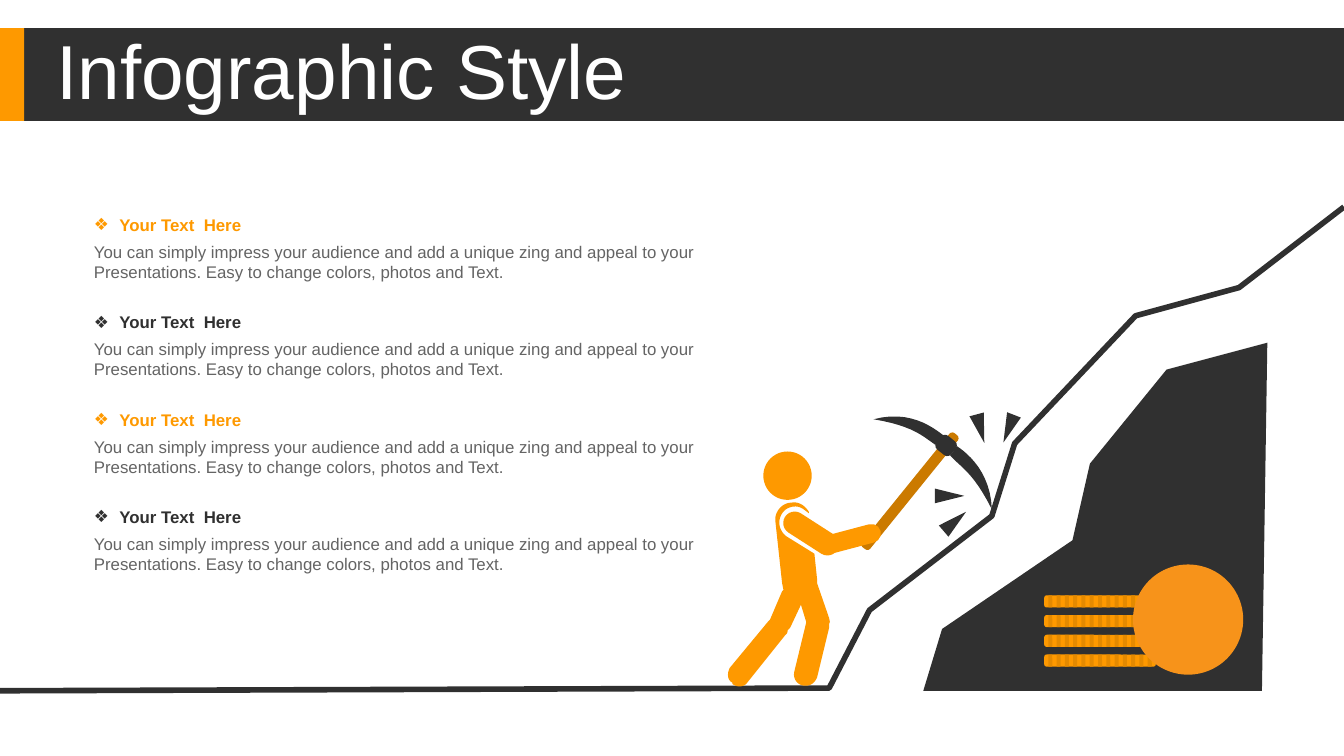
from dataclasses import dataclass

from lxml.etree import SubElement
from pptx import Presentation
from pptx.dml.color import RGBColor
from pptx.enum.shapes import MSO_SHAPE
from pptx.enum.text import MSO_ANCHOR, MSO_AUTO_SIZE, PP_ALIGN
from pptx.oxml.ns import qn
from pptx.util import Inches, Pt

COLORS = {
    "dark": "303030",
    "orange": "FE9900",
    "shade": "E58A00",
    "wood": "CB7A00",
    "coin": "F7931A",
    "gray": "646464",
    "white": "FFFFFF",
}
HEAD = "Your Text  Here"
BODY = ("You can simply impress your audience and add a unique zing and appeal "
        "to your Presentations. Easy to change colors, photos and Text.")


@dataclass
class Part:
    kind: MSO_SHAPE
    left: float
    top: float
    width: float
    height: float
    color: str
    turn: float = 0
    round: float | None = None


@dataclass
class Path:
    start: tuple
    steps: list
    color: str


RECT, PILL = MSO_SHAPE.RECTANGLE, MSO_SHAPE.ROUNDED_RECTANGLE
OVAL, WEDGE = MSO_SHAPE.OVAL, MSO_SHAPE.ISOSCELES_TRIANGLE

BARS = [Part(RECT, 0, 0.21, 10, 0.69, "dark"), Part(RECT, 0, 0.21, 0.18, 0.69, "orange")]
RIDGE = Path((0, 5.14), [(6.17, 5.12), (6.47, 4.54), (7.38, 3.84), (7.55, 3.3),
                         (8.45, 2.35), (9.22, 2.14), (10, 1.54)], "dark")
ROCK = Path((9.43, 2.55), [(8.68, 2.75), (8.11, 3.45), (7.98, 4.02), (7.01, 4.68),
                           (6.87, 5.14), (9.39, 5.14)], "dark")
PICK = [
    Part(PILL, 6.73, 3.11, 0.08, 1.09, "wood", 39, 0.34),
    Part(PILL, 6.97, 3.25, 0.14, 0.13, "dark", 39, 0.28),
]
BLADES = [
    Path((7.12, 3.32), [(7.21, 3.38, 7.37, 3.52, 7.38, 3.79),
                        (7.24, 3.51, 7.14, 3.47, 7.07, 3.39)], "dark"),
    Path((7.02, 3.24), [(6.93, 3.17, 6.76, 3.05, 6.5, 3.12),
                        (6.8, 3.17, 6.87, 3.25, 6.96, 3.31)], "dark"),
]
TORSO = Path((5.89, 3.74), [
    (5.94, 3.73, 5.99, 3.76, 6.02, 3.81), (6.02, 3.82), (5.98, 3.79),
    (5.93, 3.75, 5.85, 3.77, 5.82, 3.82), (5.78, 3.88, 5.8, 3.95, 5.85, 3.99),
    (6.06, 4.12), (6.08, 4.31), (6.08, 4.34), (6.17, 4.6),
    (6.17, 4.61, 6.18, 4.63, 6.17, 4.64), (6.17, 4.67), (6.08, 5.04),
    (6.06, 5.09, 6.02, 5.11, 5.97, 5.1), (5.93, 5.09, 5.9, 5.05, 5.91, 5),
    (6, 4.63), (5.96, 4.5), (5.88, 4.67), (5.86, 4.69), (5.86, 4.7),
    (5.86, 4.71, 5.85, 4.72, 5.84, 4.73), (5.56, 5.08),
    (5.54, 5.11, 5.49, 5.12, 5.45, 5.09), (5.45, 5.08),
    (5.41, 5.06, 5.41, 5.01, 5.43, 4.97), (5.72, 4.62), (5.73, 4.61),
    (5.82, 4.4), (5.83, 4.39), (5.82, 4.34), (5.77, 3.88),
    (5.76, 3.81, 5.82, 3.74, 5.89, 3.74),
], "orange")
LIMBS = [
    Part(OVAL, 5.68, 3.36, 0.36, 0.36, "orange"),
    Part(PILL, 5.95, 3.74, 0.17, 0.46, "orange", 302.7, 0.5),
    Part(PILL, 6.26, 3.78, 0.14, 0.46, "orange", 255.1, 0.5),
]
SPARKS = [Part(WEDGE, left, top, 0.11, 0.22, "dark", turn) for left, top, turn in
          [(7.05, 3.77, 49.3), (7.01, 3.58, 90), (7.24, 3.08, 165), (7.45, 3.08, 201.1)]]


def tint(name: str) -> RGBColor:
    return RGBColor.from_string(COLORS[name])


def draw_part(slide, part: Part) -> None:
    shape = slide.shapes.add_shape(part.kind, Inches(part.left), Inches(part.top),
                                   Inches(part.width), Inches(part.height))
    shape.shadow.inherit = False
    shape.fill.solid()
    shape.fill.fore_color.rgb = tint(part.color)
    shape.line.fill.background()
    shape.rotation = part.turn
    if part.round is not None:
        shape.adjustments[0] = part.round


def trace(path: Path) -> list[tuple]:
    spots = [path.start]
    for step in path.steps:
        if len(step) == 2:
            spots.append(step)
            continue
        a, b, c, d = spots[-1], step[:2], step[2:4], step[4:]
        for t in (n / 12 for n in range(1, 13)):
            u = 1 - t
            spots.append(tuple(
                u**3 * a[k] + 3 * u * u * t * b[k] + 3 * u * t * t * c[k] + t**3 * d[k]
                for k in (0, 1)))
    return spots


def draw_path(slide, path: Path, width: float = 0) -> None:
    spots = [(Inches(x), Inches(y)) for x, y in trace(path)]
    pen = slide.shapes.build_freeform(*spots[0])
    pen.add_line_segments(spots[1:], close=not width)
    shape = pen.convert_to_shape()
    shape.shadow.inherit = False
    if width:
        shape.fill.background()
        shape.line.color.rgb = tint(path.color)
        shape.line.width = Pt(width)
    else:
        shape.fill.solid()
        shape.fill.fore_color.rgb = tint(path.color)
        shape.line.fill.background()


def style(line, size: float, color: str, bold: bool = False) -> None:
    for run in line.runs:
        run.font.name = "Arial"
        run.font.size = Pt(size)
        run.font.bold = bold
        run.font.color.rgb = tint(color)


def draw_text(slide, text: str, top: float, height: float, color: str,
              bullet: bool = False) -> None:
    box = slide.shapes.add_textbox(Inches(0.6), Inches(top), Inches(4.68), Inches(height))
    box.text_frame.word_wrap = True
    box.text_frame.text = text
    line = box.text_frame.paragraphs[0]
    if bullet:
        props = line._p.get_or_add_pPr()
        props.set("marL", str(Inches(0.19)))
        props.set("indent", str(-Inches(0.19)))
        SubElement(props, qn("a:buFont"), typeface="Arial")
        SubElement(props, qn("a:buChar"), char="❖")
    style(line, 9, color, bullet)


def draw_title(slide) -> None:
    title = slide.shapes.title
    title.element.getparent().append(title.element)
    title.left, title.top = Inches(0.35), Inches(0.26)
    title.width, title.height = Inches(7.27), Inches(0.59)
    frame = title.text_frame
    frame.text = "Infographic Style"
    frame.auto_size = MSO_AUTO_SIZE.NONE
    frame.vertical_anchor = MSO_ANCHOR.MIDDLE
    frame.margin_left = frame.margin_right = Inches(0.07)
    frame.margin_top = frame.margin_bottom = Inches(0.04)
    line = frame.paragraphs[0]
    line.alignment = PP_ALIGN.LEFT
    line.line_spacing = 0.9
    style(line, 41, "white")


def draw_coins(slide) -> None:
    for row in range(4):
        top = 4.43 + row * 0.44 / 3
        draw_part(slide, Part(PILL, 7.77, top, 0.83, 0.09, "orange", round=0.2))
        for col in range(13):
            left = 7.8 + col * 0.74 / 12
            draw_part(slide, Part(PILL, left, top, 0.03, 0.09, "shade", round=0.2))
    draw_part(slide, Part(OVAL, 8.43, 4.2, 0.82, 0.82, "coin"))


def main() -> None:
    deck = Presentation()
    deck.slide_width = Inches(10)
    deck.slide_height = deck.slide_width * 9 // 16
    slide = deck.slides.add_slide(deck.slide_layouts[5])
    for part in BARS:
        draw_part(slide, part)
    draw_title(slide)
    for row in range(4):
        top = 1.55 + row * 2.17 / 3
        draw_text(slide, HEAD, top, 0.25, ("orange", "dark")[row % 2], bullet=True)
        draw_text(slide, BODY, top + 0.2, 0.4, "gray")
    draw_path(slide, RIDGE, width=3)
    draw_path(slide, ROCK)
    for part in PICK:
        draw_part(slide, part)
    for path in [*BLADES, TORSO]:
        draw_path(slide, path)
    for part in LIMBS:
        draw_part(slide, part)
    draw_coins(slide)
    for part in SPARKS:
        draw_part(slide, part)
    deck.save("out.pptx")


if __name__ == "__main__":
    main()
